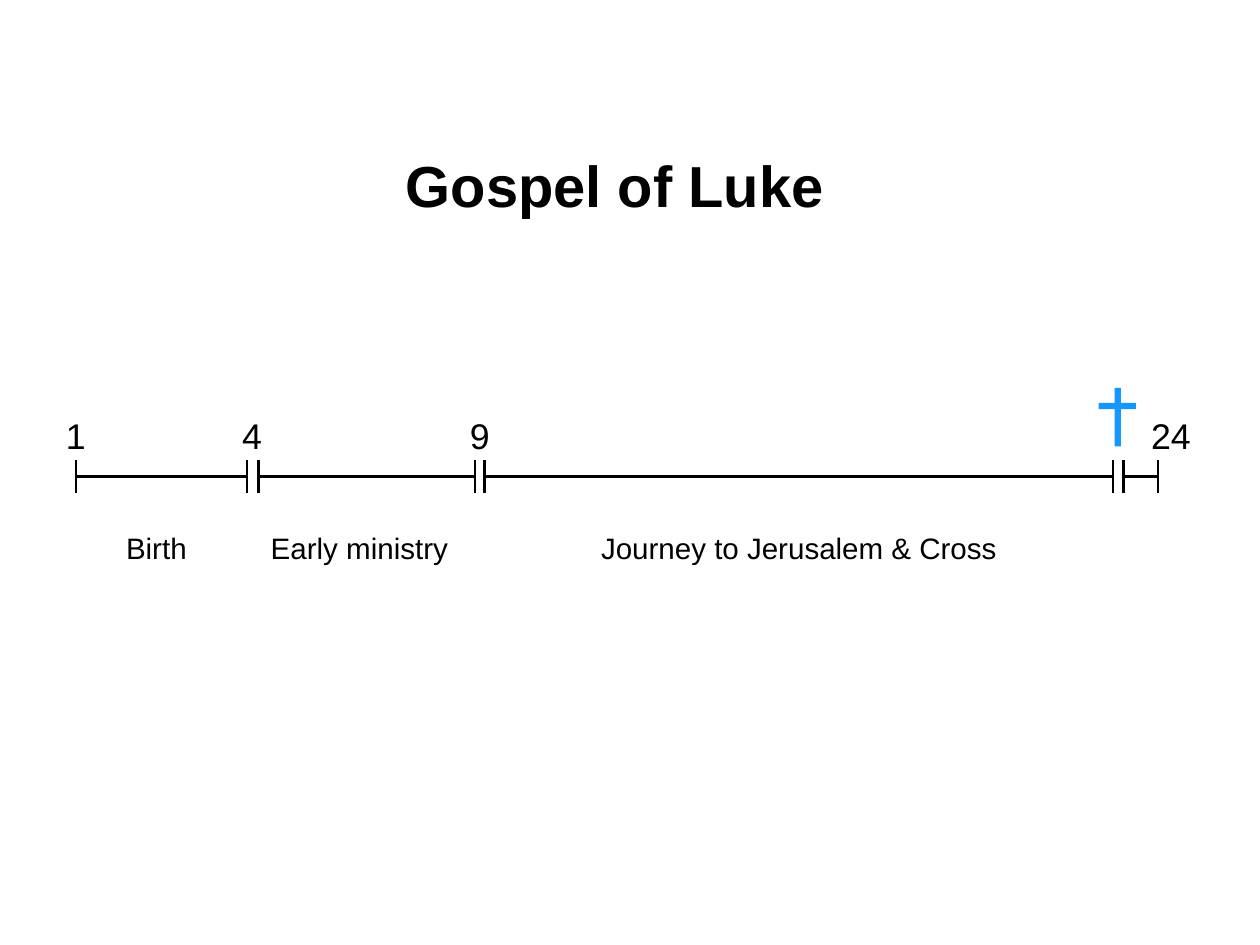
from dataclasses import dataclass

from lxml.etree import SubElement
from pptx import Presentation
from pptx.dml.color import RGBColor as RGB
from pptx.enum.shapes import MSO_CONNECTOR as Link, MSO_SHAPE as Form
from pptx.enum.text import MSO_ANCHOR as Anchor, MSO_AUTO_SIZE as Fit, PP_ALIGN as Align
from pptx.oxml.ns import qn
from pptx.util import Inches, Pt


@dataclass(frozen=True)
class Theme:
    face: str = "Arial"
    ink: RGB = RGB(0x00, 0x00, 0x00)
    blue: RGB = RGB(0x15, 0x97, 0xFC)
    title: int = 47
    mark: int = 29
    label: int = 24
    line: int = 2


THEME = Theme()

# Timeline: height of the axis, half a tick, and start and end of each part
AXIS, HALF, LAP = 5.38, 0.19, 0.01
PARTS = [(0.86, 2.79), (2.92, 5.36), (5.47, 12.56), (12.68, 13.07)]

# Text: left edge, width, wording
MARKS = [(0.68, 0.35, "1"), (2.67, 0.35, "4"), (5.24, 0.35, "9"), (12.93, 0.57, "24")]
LABELS = [
    (1.36, 0.81, "Birth"),
    (2.99, 2.13, "Early ministry"),
    (6.72, 4.59, "Journey to Jerusalem & Cross"),
]

# Cross: left, top, width, height of each bar
BARS = [(12.58, 4.38, 0.07, 0.66), (12.4, 4.55, 0.42, 0.07)]


def put(item, values):
    for name, value in values.items():
        setattr(item, name, value)


def write(frame, text, size, bold=False):
    pad = Inches(0.06)
    put(frame, {
        "text": text, "word_wrap": False, "auto_size": Fit.SHAPE_TO_FIT_TEXT,
        "vertical_anchor": Anchor.MIDDLE, "margin_left": pad,
        "margin_top": pad, "margin_right": pad, "margin_bottom": pad,
    })
    para = frame.paragraphs[0]
    put(para, {"alignment": Align.CENTER, "line_spacing": 1.0, "space_before": Pt(0)})
    font = para.runs[0].font
    put(font, {"name": THEME.face, "size": Pt(size), "bold": bold})
    font.color.rgb = THEME.ink


def add_text(slide, left, top, width, height, text, size):
    box = slide.shapes.add_textbox(*map(Inches, (left, top, width, height)))
    write(box.text_frame, text, size)


def add_line(slide, *ends):
    line = slide.shapes.add_connector(Link.STRAIGHT, *map(Inches, ends))
    line.line.color.rgb = THEME.ink
    line.line.width = Pt(THEME.line)
    SubElement(line._element.spPr, qn("a:effectLst"))


def add_bar(group, *place):
    bar = group.shapes.add_shape(Form.RECTANGLE, *map(Inches, place))
    bar.shadow.inherit = False
    bar.fill.solid()
    bar.fill.fore_color.rgb = THEME.blue
    bar.line.fill.background()


def main():
    deck = Presentation()
    put(deck, {"slide_width": Inches(14.22), "slide_height": Inches(10.67)})
    slide = deck.slides.add_slide(deck.slide_layouts[5])

    # Title
    title = slide.shapes.title
    put(title, {
        "left": Inches(4.52), "top": Inches(1.66),
        "width": Inches(4.84), "height": Inches(0.85),
    })
    write(title.text_frame, "Gospel of Luke", THEME.title, bold=True)

    # Axis parts with a tick at each end
    for start, end in PARTS:
        add_line(slide, start - LAP, AXIS, end + LAP, AXIS)
        for tick in (start, end):
            add_line(slide, tick, AXIS + HALF, tick, AXIS - HALF)

    # Chapter numbers and part names
    for left, width, text in MARKS:
        add_text(slide, left, 4.64, width, 0.56, text, THEME.mark)
    for left, width, text in LABELS:
        add_text(slide, left, 5.94, width, 0.49, text, THEME.label)

    # Cross
    cross = slide.shapes.add_group_shape()
    for bar in BARS:
        add_bar(cross, *bar)

    deck.save("out.pptx")


if __name__ == "__main__":
    main()
